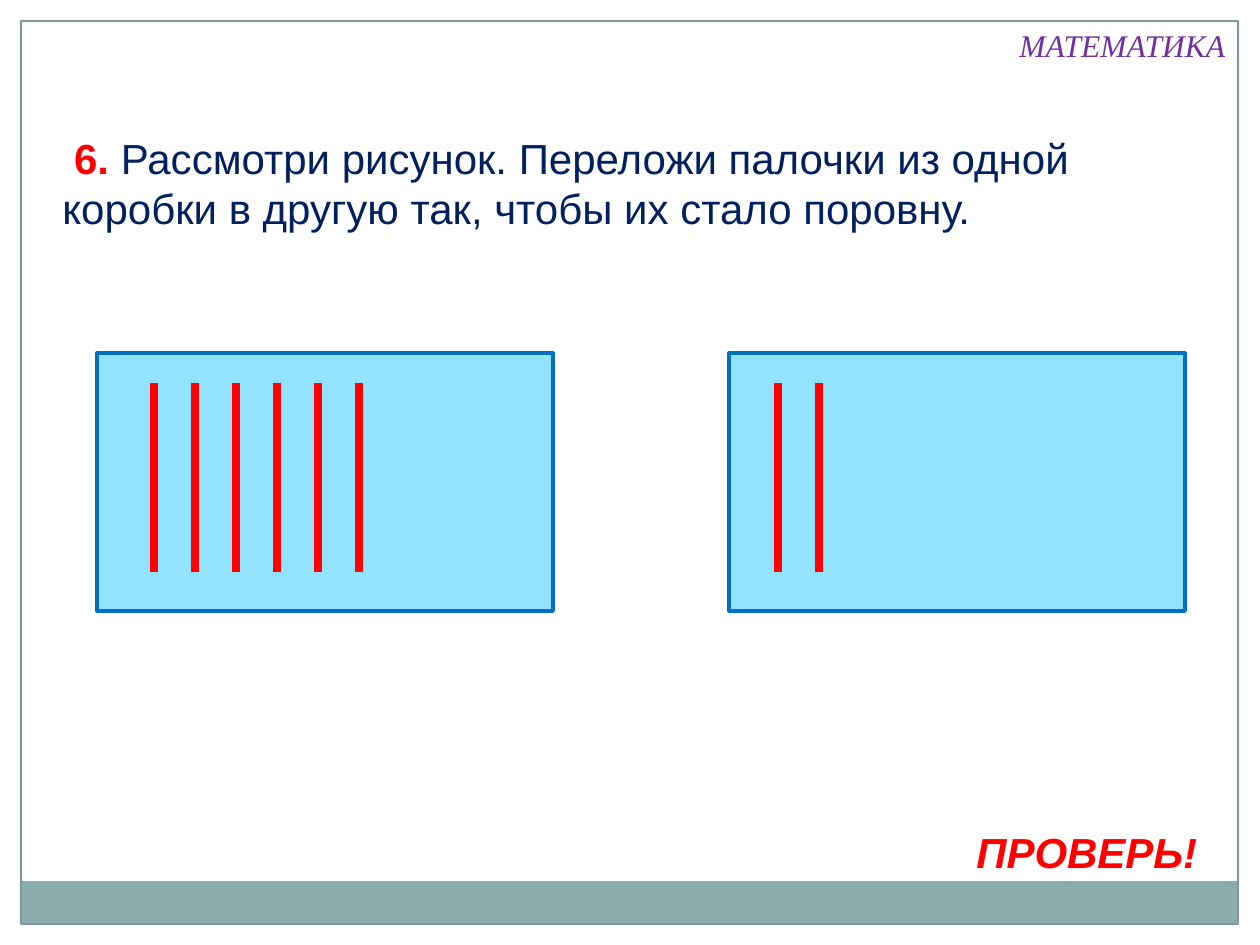
from dataclasses import dataclass

from lxml.etree import SubElement
from pptx import Presentation
from pptx.dml.color import RGBColor
from pptx.enum.shapes import MSO_CONNECTOR, MSO_SHAPE
from pptx.oxml.ns import qn
from pptx.util import Pt

SCALE = 914400 / 126


@dataclass(frozen=True)
class Theme:
    sans: str = "Arial"
    serif: str = "Times New Roman"
    band: str = "8CADAE"
    frame: str = "7C999A"
    box: str = "93E3FF"
    edge: str = "0070C0"
    red: str = "FF0000"
    navy: str = "002060"
    purple: str = "7030A0"
    small: int = 18
    large: int = 24


THEME = Theme()


def px(*values):
    return [round(value * SCALE) for value in values]


def color(code):
    return RGBColor.from_string(code)


def add_rect(slide, place, fill=None, line=None, weight=0.75):
    rect = slide.shapes.add_shape(MSO_SHAPE.RECTANGLE, *px(*place))
    rect.shadow.inherit = False
    if fill:
        rect.fill.solid()
        rect.fill.fore_color.rgb = color(fill)
    else:
        rect.fill.background()
    if line:
        rect.line.color.rgb = color(line)
        rect.line.width = Pt(weight)
    else:
        rect.line.fill.background()


def add_text(slide, place, parts, size, font, italic=False, wrap=True):
    """Write one paragraph from parts of (wording, colour, bold)."""
    frame = slide.shapes.add_textbox(*px(*place)).text_frame
    frame.word_wrap = wrap
    for words, shade, bold in parts:
        run = frame.paragraphs[0].add_run()
        run.text = words
        run.font.name = font
        run.font.size = Pt(size)
        run.font.bold = bold
        run.font.italic = italic
        run.font.color.rgb = color(shade)


def add_sticks(slide, left, count, top=383, bottom=572, pitch=41):
    for i in range(count):
        x = left + i * pitch
        stick = slide.shapes.add_connector(
            MSO_CONNECTOR.STRAIGHT, *px(x, top, x, bottom))
        stick.line.color.rgb = color(THEME.red)
        stick.line.width = Pt(4.5)
        SubElement(stick._element.spPr, qn("a:effectLst"))


def main():
    deck = Presentation()
    deck.slide_width, deck.slide_height = px(1260, 945)
    slide = deck.slides.add_slide(deck.slide_layouts[6])

    add_rect(slide, (20, 881, 1218, 43), fill=THEME.band)
    add_rect(slide, (21, 21, 1217, 903), line=THEME.frame)
    for left in (97, 729):
        add_rect(slide, (left, 353, 456, 258), THEME.box, THEME.edge, 2.25)

    add_text(slide, (1007, 20, 233, 50), [("МАТЕМАТИКА", THEME.purple, False)],
             THEME.small, THEME.serif, italic=True, wrap=False)
    add_text(slide, (964, 820, 262, 63), [("ПРОВЕРЬ!", THEME.red, True)],
             THEME.large, THEME.sans, italic=True)
    task = ("Рассмотри рисунок. Переложи палочки из одной коробки в другую "
            "так, чтобы их стало поровну.")
    add_text(slide, (50, 126, 1155, 115),
             [(" 6. ", THEME.red, True), (task, THEME.navy, False)],
             THEME.large, THEME.sans)

    add_sticks(slide, 154, 6)
    add_sticks(slide, 778, 2)
    deck.save("out.pptx")


if __name__ == "__main__":
    main()
